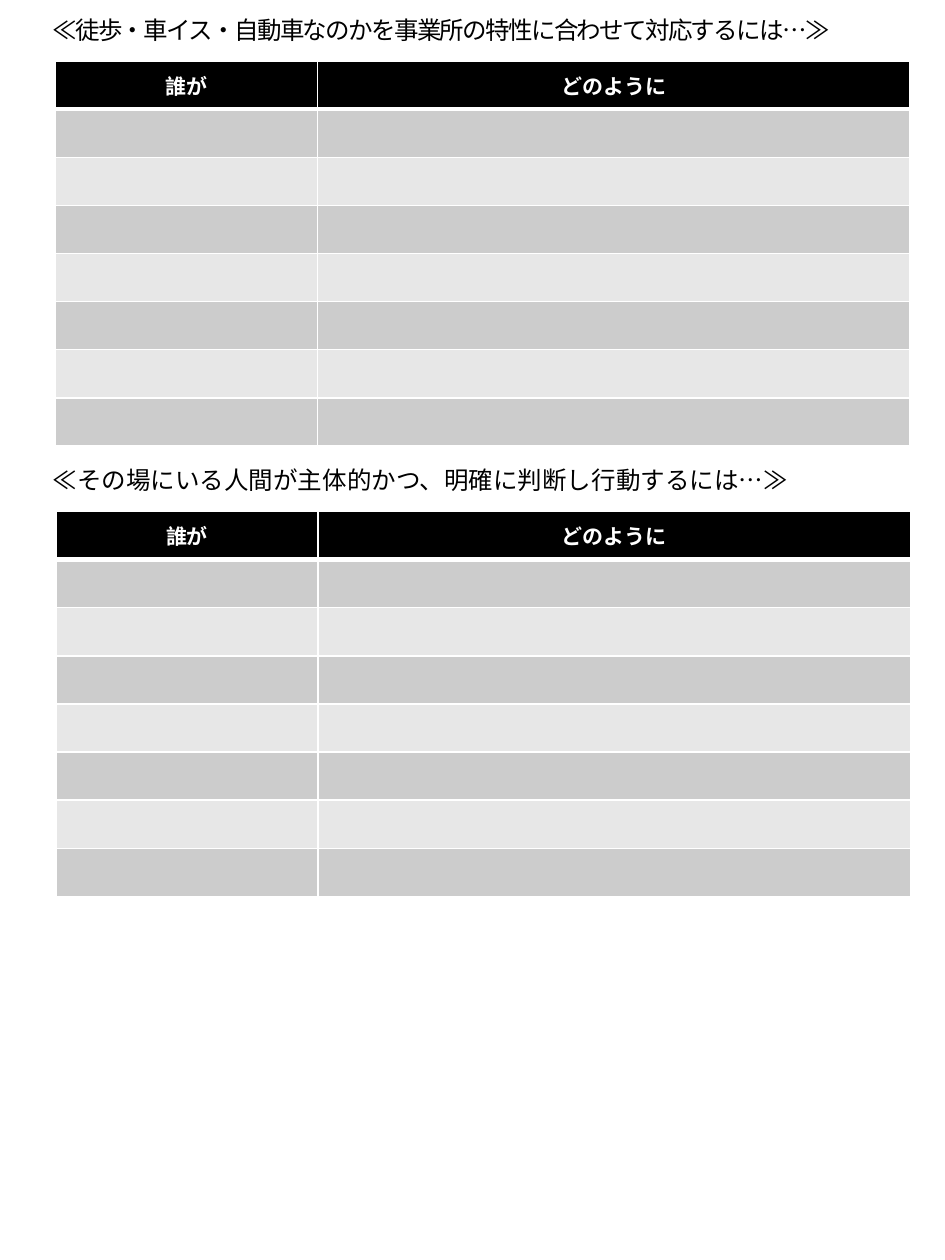
from lxml import etree
from pptx import Presentation
from pptx.dml.color import RGBColor
from pptx.enum.text import MSO_ANCHOR, MSO_AUTO_SIZE, PP_ALIGN
from pptx.oxml.ns import qn
from pptx.util import Cm, Pt

MIDDLE = MSO_ANCHOR.MIDDLE
GROW = MSO_AUTO_SIZE.SHAPE_TO_FIT_TEXT
CENTER = PP_ALIGN.CENTER
BLACK = RGBColor(0x00, 0x00, 0x00)
WHITE = RGBColor(0xFF, 0xFF, 0xFF)
DARK = RGBColor(0xCC, 0xCC, 0xCC)
LIGHT = RGBColor(0xE7, 0xE7, 0xE7)
FONT = "Noto Sans CJK JP"

HEADS = ["誰が", "どのように"]
WIDTHS = [Cm(5.28), Cm(11.94)]
ROWS = 8
ROW_H = Cm(0.97)

# title, title top, table left, table top, letter spacing in 1/100 pt
PARTS = [
    ("≪徒歩・車イス・自動車なのかを事業所の特性に合わせて対応するには…≫",
     Cm(0.18), Cm(1.12), Cm(1.23), -100),
    ("≪その場にいる人間が主体的かつ、明確に判断し行動するには…≫",
     Cm(9.25), Cm(1.13), Cm(10.31), 0),
]


def add_run(para, text, size, color, bold=False):
    run = para.add_run()
    run.text = text
    run.font.size = Pt(size)
    run.font.name = FONT
    run.font.bold = bold
    run.font.color.rgb = color
    props = run.font._element
    etree.SubElement(props, qn("a:ea"), typeface=FONT)
    return props


def add_edges(cell, base):
    """Draw white cell borders, 1 pt wide except for the top and bottom given in base."""
    props = cell._tc.get_or_add_tcPr()
    for spot, side in enumerate(["lnL", "lnR", "lnT", "lnB"]):
        line = etree.Element(qn("a:" + side), w=str(Pt(base.get(side, 1))))
        fill = etree.SubElement(line, qn("a:solidFill"))
        etree.SubElement(fill, qn("a:srgbClr"), val=str(WHITE))
        props.insert(spot, line)


prs = Presentation()
prs.slide_width = Cm(19.05)
prs.slide_height = Cm(25.4)
slide = prs.slides.add_slide(prs.slide_layouts[6])

for title, title_top, left, top, gap in PARTS:
    box = slide.shapes.add_textbox(Cm(0.81), title_top, Cm(19.13), Cm(0.86))
    frame = box.text_frame
    frame.word_wrap = True
    frame.auto_size = GROW
    props = add_run(frame.paragraphs[0], title, 14, BLACK)
    if gap:
        props.set("spc", str(gap))

    table = slide.shapes.add_table(
        ROWS, len(HEADS), left, top, sum(WIDTHS), ROW_H * ROWS).table
    for col, width in zip(table.columns, WIDTHS):
        col.width = width
    for r in range(ROWS):
        table.rows[r].height = ROW_H
        for c, head in enumerate(HEADS):
            cell = table.cell(r, c)
            cell.fill.solid()
            para = cell.text_frame.paragraphs[0]
            if r == 0:
                cell.fill.fore_color.rgb = BLACK
                cell.vertical_anchor = MIDDLE
                para.alignment = CENTER
                add_run(para, head, 12, WHITE, True)
                add_edges(cell, {"lnB": 3})
            else:
                cell.fill.fore_color.rgb = DARK if r % 2 else LIGHT
                etree.SubElement(para._p, qn("a:endParaRPr"), sz="1200")
                add_edges(cell, {"lnT": 3} if r == 1 else {})

prs.save("out.pptx")
